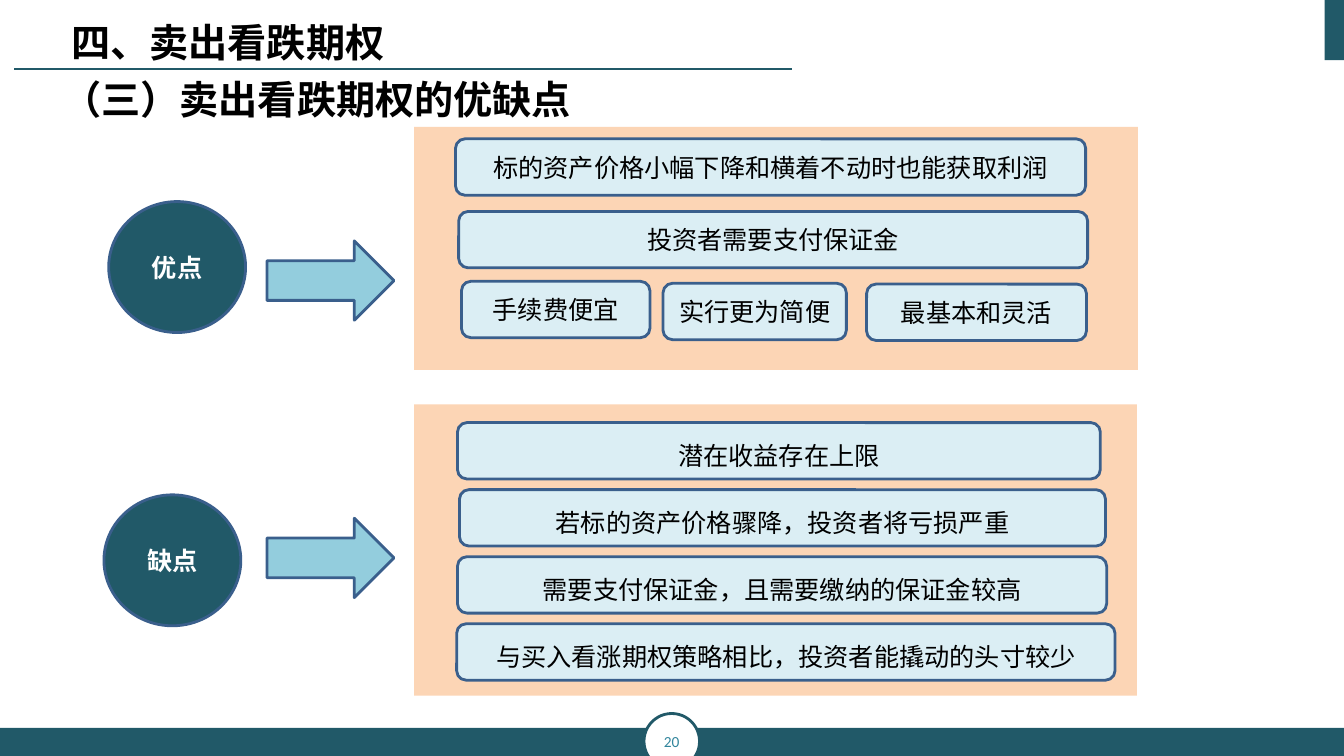
from pptx import Presentation
from pptx import util as u
from pptx.dml import color as clr
from pptx.enum import shapes as sh, text as tx
from pptx.oxml import ns
from lxml import etree

INK = {"teal": "215968", "edge": "3A5F8C", "peach": "FCD5B5", "ice": "DBEEF4",
       "sky": "93CDDD", "num": "31859C", "white": "FFFFFF", "black": "000000"}
KIND = sh.MSO_SHAPE
HAN = "Noto Sans CJK SC"
HEAD = {"size": u.Pt(28), "bold": True, "name": "Times New Roman"}
BODY = {"size": u.Pt(18), "bold": False, "name": "Times New Roman"}
DISC = {"size": u.Pt(18), "bold": True, "name": "Calibri"}
PAGE = {"size": u.Pt(11), "bold": False, "name": "Calibri"}

PROS = [("标的资产价格小幅下降和横着不动时也能获取利润", 1.04, 0.3, 15.88),
        ("投资者需要支付保证金", 1.12, 2.13, 15.85),
        ("手续费便宜", 1.19, 3.89, 4.75),
        ("实行更为简便", 6.27, 3.94, 4.62),
        ("最基本和灵活", 11.4, 3.96, 5.54)]
LOSS = [("潜在收益存在上限", 1.09, 16.2),
        ("若标的资产价格骤降，投资者将亏损严重", 1.14, 16.28),
        ("需要支付保证金，且需要缴纳的保证金较高", 1.09, 16.36),
        ("与买入看涨期权策略相比，投资者能撬动的头寸较少", 1.07, 16.59)]
CONS = [(word, x, 0.46 + 1.69 * i, w) for i, (word, x, w) in enumerate(LOSS)]


def rgb(key):
    return clr.RGBColor.from_string(INK[key])


def span(box):
    return [u.Cm(n) for n in box]


def write(shape, word, form, ink, align=tx.PP_ALIGN.CENTER, lead=None):
    para = shape.text_frame.paragraphs[0]
    para.alignment = align
    if lead:
        para.line_spacing = lead
    run = para.add_run()
    run.text = word
    for key, val in form.items():
        setattr(run.font, key, val)
    run.font.color.rgb = rgb(ink)
    etree.SubElement(run.font._element, ns.qn("a:ea")).set("typeface", HAN)


def draw(slide, kind, box, fill, edge=None):
    shape = slide.shapes.add_shape(kind, *span(box))
    shape.shadow.inherit = False
    shape.fill.solid()
    shape.fill.fore_color.rgb = rgb(fill)
    if edge:
        shape.line.color.rgb = rgb(edge)
        shape.line.width = u.Pt(2)
    else:
        shape.line.fill.background()
    shape.text_frame.vertical_anchor = tx.MSO_ANCHOR.MIDDLE
    return shape


def label(slide, box, word, align):
    area = slide.shapes.add_textbox(*span(box))
    area.text_frame.word_wrap = True
    write(area, word, HEAD, "black", align)


def frame(slide, wide, high):
    draw(slide, KIND.RECTANGLE, (wide - 0.49, 0, 0.49, 1.52), "teal")
    draw(slide, KIND.RECTANGLE, (0, high - 0.71, wide, 0.71), "teal")
    disc = draw(slide, KIND.OVAL, (16.23, high - 1.07, 1.4, 1.4), "white", "teal")
    for side in ("left", "right", "top", "bottom"):
        setattr(disc.text_frame, "margin_" + side, 0)
    write(disc, "20", PAGE, "num")
    rule = slide.shapes.add_connector(sh.MSO_CONNECTOR.STRAIGHT,
                                      *span((0.36, 1.73, 19.96, 1.73)))
    rule.line.color.rgb = rgb("teal")
    rule.line.width = u.Pt(1.5)
    etree.SubElement(rule._element.spPr, ns.qn("a:effectLst"))


def titles(slide, left, top):
    label(slide, (left, top, 8.84, 1.45), "四、卖出看跌期权", tx.PP_ALIGN.CENTER)
    label(slide, (left, top + 1.45, 31.8, 1.45), "（三）卖出看跌期权的优缺点",
          tx.PP_ALIGN.LEFT)


def panel(slide, box, name, disc, rows, lead=None):
    left, top = box[:2]
    draw(slide, KIND.RECTANGLE, box, "peach")
    dot = draw(slide, KIND.OVAL, (left + disc[0], top + disc[1], 3.45, 3.3),
               "teal", "edge")
    write(dot, name, DISC, "white")
    draw(slide, KIND.RIGHT_ARROW, (left - 3.71, top + 2.87, 3.2, 2), "sky", "edge")
    for word, x, y, w in rows:
        card = draw(slide, KIND.ROUNDED_RECTANGLE, (left + x, top + y, w, 1.42),
                    "ice", "edge")
        card.text_frame.word_wrap = True
        write(card, word, BODY, "black", lead=lead)


def main():
    deck = Presentation()
    wide, high = 33.87, 19.05
    deck.slide_width, deck.slide_height = u.Cm(wide), u.Cm(high)
    slide = deck.slides.add_slide(deck.slide_layouts[6])
    frame(slide, wide, high)
    titles(slide, 1.32, 0.33)
    panel(slide, (10.44, 3.2, 18.24, 6.12), "优点", (-7.7, 1.88), PROS)
    panel(slide, (10.44, 10.19, 18.21, 7.34), "缺点", (-7.82, 2.28), CONS, 1.3)
    deck.save("out.pptx")


if __name__ == "__main__":
    main()
